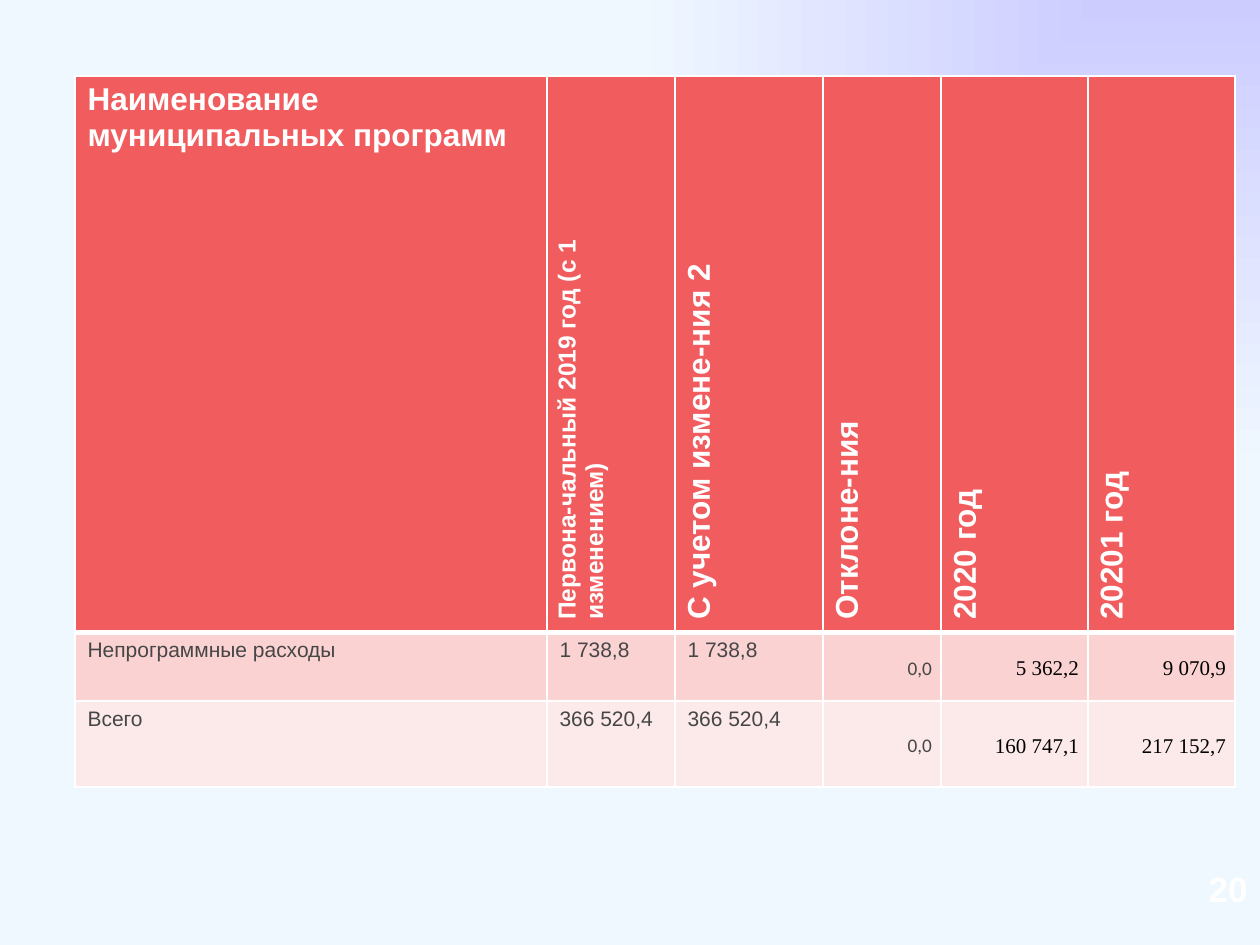
import dataclasses

import lxml.etree
import pptx
import pptx.dml.color
import pptx.enum.text
import pptx.oxml.ns
import pptx.util

PX = 914400 / 126
ALIGN = pptx.enum.text.PP_ALIGN
ANCHOR = pptx.enum.text.MSO_ANCHOR


@dataclasses.dataclass(frozen=True)
class Theme:
    glow: str = "CCCCFF"
    page: str = "F0F8FF"
    header: str = "F15D5F"
    bands: tuple = ("FAD2D2", "FCEAEA")
    white: str = "FFFFFF"
    gray: str = "464646"
    black: str = "000000"
    sans: str = "Arial"
    narrow: str = "Calibri"
    serif: str = "Times New Roman"
    large: int = 18
    medium: int = 14
    body: int = 12
    small: int = 11
    number: int = 20


THEME = Theme()
COLUMNS = (472, 128, 148, 118, 147, 147)
ROWS = (256, 69, 86)
HEADERS = (
    "Наименование муниципальных программ",
    "Первона-чальный 2019 год (с 1 изменением)",
    "С учетом измене-ния 2",
    "Отклоне-ния",
    "2020 год",
    "20201 год",
)
BODY = (
    ("Непрограммные расходы", "1 738,8", "1 738,8", "0,0", "5 362,2", "9 070,9"),
    ("Всего", "366 520,4", "366 520,4", "0,0", "160 747,1", "217 152,7"),
)


def px(length):
    return pptx.util.Emu(round(length * PX))


def rgb(color):
    return pptx.dml.color.RGBColor.from_string(color)


def add_element(parent, tag, **attributes):
    return lxml.etree.SubElement(parent, pptx.oxml.ns.qn(tag), **attributes)


def write(frame, text, size, color, font=THEME.sans, bold=False):
    para = frame.paragraphs[0]
    para.text = text
    para.font.name = font
    para.font.size = pptx.util.Pt(size)
    para.font.bold = bold
    para.font.color.rgb = rgb(color)
    return para


def paint_background(page):
    fill = page.background.fill
    fill.gradient()
    for stop, color in zip(fill.gradient_stops, (THEME.glow, THEME.page)):
        stop.color.rgb = rgb(color)
    # Replace the linear gradient with one spreading from the top right corner
    gradient = page.background._cSld.find(".//" + pptx.oxml.ns.qn("a:gradFill"))
    gradient.remove(gradient.find(pptx.oxml.ns.qn("a:lin")))
    spread = add_element(gradient, "a:path", path="rect")
    add_element(spread, "a:fillToRect", l="100000", b="100000")


def style_cell(cell, fill, top=1, bottom=1):
    properties = cell._tc.get_or_add_tcPr()
    for side, width in (("L", 1), ("R", 1), ("T", top), ("B", bottom)):
        line = add_element(properties, "a:ln" + side, w=str(pptx.util.Pt(width)))
        solid = add_element(line, "a:solidFill")
        add_element(solid, "a:srgbClr", val=THEME.white)
    cell.fill.solid()
    cell.fill.fore_color.rgb = rgb(fill)


def fill_header(table):
    for column, text in enumerate(HEADERS):
        cell = table.cell(0, column)
        size = THEME.medium if column == 1 else THEME.large
        write(cell.text_frame, text, size, THEME.white, bold=True)
        style_cell(cell, THEME.header, bottom=3)
        if column > 0:
            cell._tc.get_or_add_tcPr().set("vert", "vert270")


def fill_body(table):
    left = (THEME.body, THEME.gray, THEME.sans)
    deviation = (THEME.small, THEME.gray, THEME.narrow)
    year = (THEME.body, THEME.black, THEME.serif)
    styles = (left, left, left, deviation, year, year)
    for row, texts in enumerate(BODY, 1):
        for column, (text, style) in enumerate(zip(texts, styles)):
            cell = table.cell(row, column)
            para = write(cell.text_frame, text, *style)
            style_cell(cell, THEME.bands[row - 1], top=3 if row == 1 else 1)
            if style is not left:
                para.alignment = ALIGN.RIGHT
                para.line_spacing = 1.15
                cell.vertical_anchor = ANCHOR.MIDDLE
                cell.margin_left = cell.margin_right = px(9)
                cell.margin_top = cell.margin_bottom = 0


def add_budget_table(page):
    frame = page.shapes.add_table(
        len(ROWS), len(COLUMNS), px(75), px(76), px(sum(COLUMNS)), px(sum(ROWS))
    )
    table = frame.table
    for column, width in zip(table.columns, COLUMNS):
        column.width = px(width)
    for row, height in zip(table.rows, ROWS):
        row.height = px(height)
    fill_header(table)
    fill_body(table)


def add_page_number(page, text):
    box = page.shapes.add_textbox(px(1134), px(857), px(126), px(63))
    box.text_frame.word_wrap = True
    box.text_frame.vertical_anchor = ANCHOR.MIDDLE
    para = write(box.text_frame, text, THEME.number, THEME.white, bold=True)
    para.alignment = ALIGN.RIGHT


def main():
    deck = pptx.Presentation()
    deck.slide_width, deck.slide_height = px(1260), px(945)
    page = deck.slides.add_slide(deck.slide_layouts[6])
    paint_background(page)
    add_budget_table(page)
    add_page_number(page, "20")
    deck.save("out.pptx")


if __name__ == "__main__":
    main()
